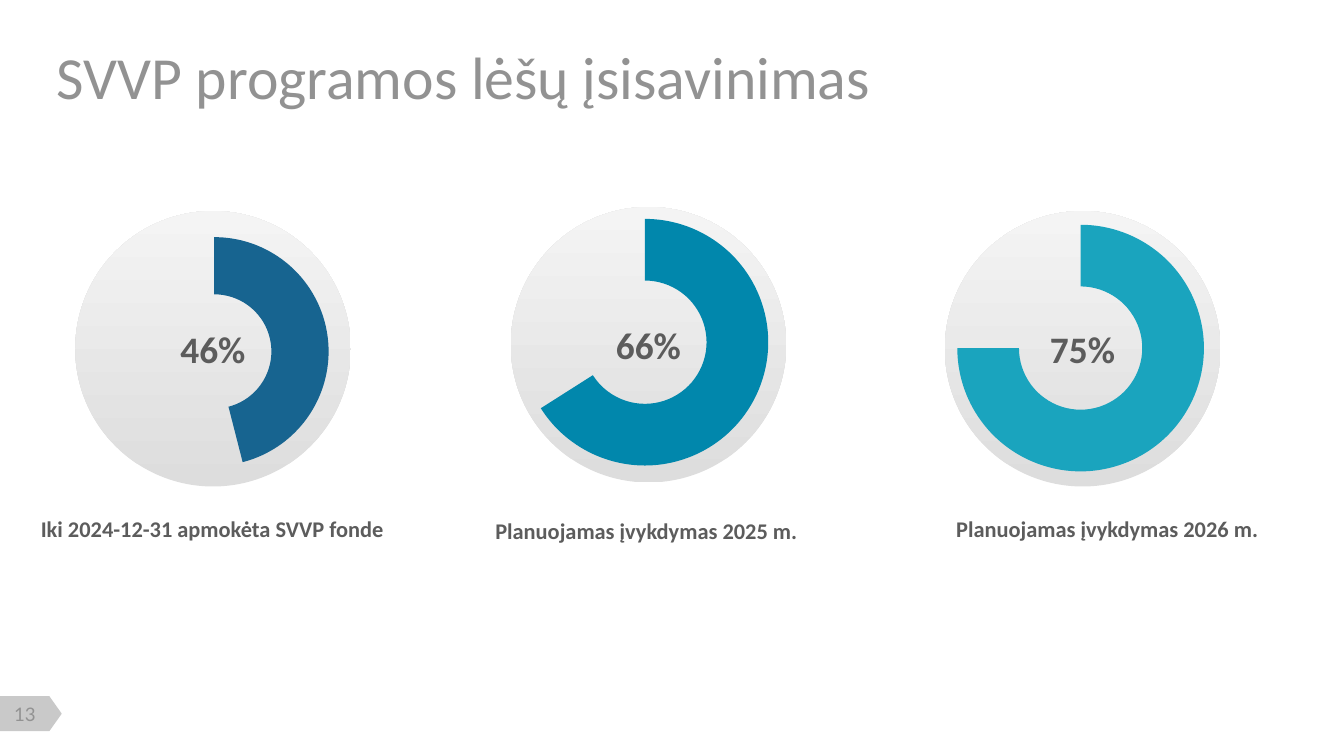
from lxml import etree
from pptx import Presentation
from pptx.chart.data import CategoryChartData
from pptx.dml.color import RGBColor
from pptx.enum.chart import XL_CHART_TYPE as ChartType
from pptx.enum.shapes import MSO_SHAPE as Shape
from pptx.enum.text import MSO_ANCHOR as Anchor, PP_ALIGN as Align
from pptx.oxml import parse_xml
from pptx.oxml.ns import nsdecls, qn
from pptx.util import Inches, Pt

GRAY = "929292"
DARK = "5C5C5C"
DIAL = 2.05


def rgb(value):
    return RGBColor.from_string(value)


def write(shape, text, size, color, font="Calibri", bold=False,
          align=Align.CENTER, anchor=Anchor.MIDDLE, insets=(0, 0, 0, 0)):
    frame = shape.text_frame
    sides = ("margin_left", "margin_top", "margin_right", "margin_bottom")
    for side, inset in zip(sides, insets):
        setattr(frame, side, Inches(inset))
    frame.word_wrap = True
    frame.vertical_anchor = anchor
    paragraph = frame.paragraphs[0]
    paragraph.alignment = align
    run = paragraph.add_run()
    run.text = text
    run.font.color.rgb = rgb(color)
    for name, value in {"name": font, "size": Pt(size), "bold": bold}.items():
        setattr(run.font, name, value)


prs = Presentation()
prs.slide_width = Inches(10)
prs.slide_height = Inches(10 * 9 / 16)
slide = prs.slides.add_slide(prs.slide_layouts[6])
shapes = slide.shapes

# Page number tag
tag = shapes.add_shape(Shape.FLOWCHART_OFFPAGE_CONNECTOR,
                       Inches(0.1), Inches(5.08), Inches(0.26), Inches(0.46))
tag.rotation = 270
tag.shadow.inherit = False
tag.fill.solid()
tag.fill.fore_color.rgb = rgb("C9C9C9")
tag.line.fill.background()
page_number = shapes.add_textbox(Inches(0.02), Inches(5.23), Inches(0.33), Inches(0.17))
write(page_number, "13", 10, GRAY, font="Lato")

title = shapes.add_textbox(Inches(0.42), Inches(0.37), Inches(9.15), Inches(0.39))
write(title, "SVVP programos lėšų įsisavinimas", 32, GRAY,
      align=Align.LEFT, insets=(0, 0.05, 0.1, 0.05))

# percent, color, dial (left, top), chart box, plot area (x, y, w, h), caption, caption box
stages = [
    (46, "176490", (0.56, 1.57), (0.56, 1.44, 2.05, 2.4), (0.09, 0.11, 0.83, 0.76),
     "Iki 2024-12-31 apmokėta SVVP fonde", (0.27, 3.83, 2.62, 0.2)),
    (66, "0187AC", (3.8, 1.54), (3.73, 1.4, 2.16, 2.25), (0.07, 0.1, 0.85, 0.82),
     "Planuojamas įvykdymas 2025 m.", (3.67, 3.85, 2.28, 0.2)),
    (75, "1AA4BE", (7.03, 1.57), (6.95, 1.42, 2.16, 2.23), (0.08, 0.11, 0.85, 0.83),
     "Planuojamas įvykdymas 2026 m.", (7.11, 3.83, 2.26, 0.2)),
]

for percent, color, (left, top), ring_box, plot_area, caption, caption_box in stages:
    dial = shapes.add_shape(Shape.OVAL, Inches(left), Inches(top), Inches(DIAL), Inches(DIAL))
    dial.shadow.inherit = False
    dial.line.fill.background()
    dial.fill.gradient()
    dial.fill.gradient_angle = 90
    for stop, shade in zip(dial.fill.gradient_stops, ("DDDDDD", "F4F4F4")):
        stop.color.rgb = rgb(shade)
    write(dial, f"{percent}%", 20, DARK, bold=True)

    data = CategoryChartData()
    data.categories = ["1", "2"]
    data.add_series("Series 1", (percent, 100 - percent))
    ring = shapes.add_chart(ChartType.DOUGHNUT, *map(Inches, ring_box), data).chart
    ring.has_legend = False
    ring.has_title = False
    ring.font.name = "Calibri"
    ring.font.size = Pt(18)
    ring.font.color.rgb = rgb("262626")
    plot = ring.plots[0]
    plot.vary_by_categories = True
    done, rest = (plot.series[0].points[i].format for i in range(2))
    done.fill.solid()
    done.fill.fore_color.rgb = rgb(color)
    rest.fill.background()
    for part in (done, rest):
        part.line.fill.background()

    # Hole size, plot position and transparent background
    space = ring.element
    space.find(".//" + qn("c:holeSize")).set("val", "64")
    area = space.find(".//" + qn("c:plotArea"))
    for old in area.findall(qn("c:layout")):
        area.remove(old)
    layout = parse_xml(f"<c:layout {nsdecls('c')}><c:manualLayout/></c:layout>")
    settings = {"layoutTarget": "inner", "xMode": "edge", "yMode": "edge",
                **dict(zip("xywh", plot_area))}
    for key, value in settings.items():
        etree.SubElement(layout[0], qn(f"c:{key}")).set("val", str(value))
    area.insert(0, layout)
    space.find(qn("c:chart")).addnext(parse_xml(
        f"<c:spPr {nsdecls('c', 'a')}><a:noFill/><a:ln><a:noFill/></a:ln></c:spPr>"))

    label = shapes.add_textbox(*map(Inches, caption_box))
    write(label, caption, 12, DARK, bold=True, anchor=Anchor.TOP)

prs.save("out.pptx")
